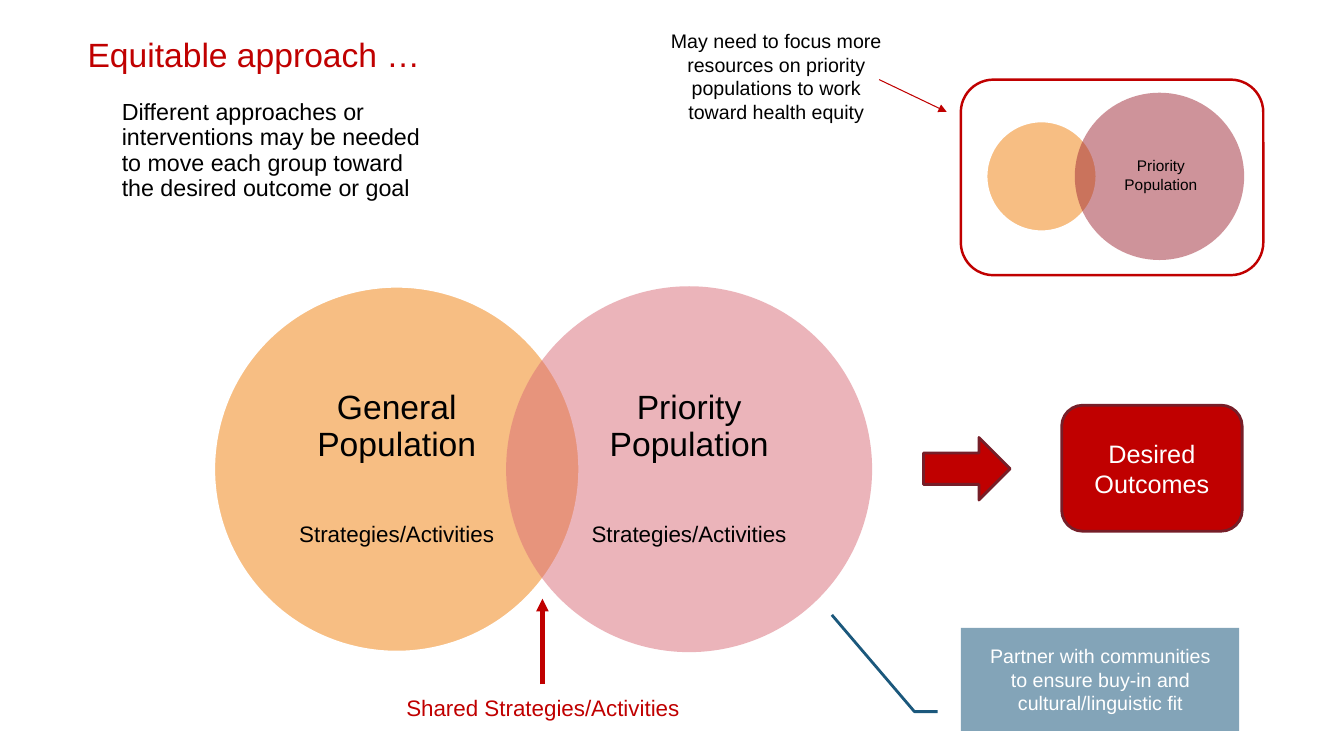
from dataclasses import dataclass

from lxml.etree import SubElement
from pptx import Presentation
from pptx.dml.color import RGBColor
from pptx.enum.shapes import MSO_CONNECTOR, MSO_SHAPE
from pptx.enum.text import MSO_ANCHOR, PP_ALIGN
from pptx.oxml.ns import qn
from pptx.util import Inches, Pt


@dataclass(frozen=True)
class Theme:
    font: str = "Arial"
    black: str = "000000"
    white: str = "FFFFFF"
    red: str = "C00000"
    dark_red: str = "761E28"
    orange: str = "F07F09"
    pink: str = "D96B77"
    wine: str = "9F2936"
    blue: str = "1B587C"
    heading: float = 24
    outcome: float = 18
    body: float = 16.6
    label: float = 16
    note: float = 14
    small: float = 11


THEME = Theme()


def color(value):
    return RGBColor.from_string(value)


def write(paragraph, text, size, text_color, align=PP_ALIGN.CENTER):
    paragraph.alignment = align
    run = paragraph.add_run()
    run.text = text
    run.font.name = THEME.font
    run.font.size = Pt(size)
    run.font.color.rgb = color(text_color)


def add_text(slide, box, text, size, text_color=THEME.black, align=PP_ALIGN.CENTER):
    """Add a wrapping text box and return its text frame."""
    frame = slide.shapes.add_textbox(*map(Inches, box)).text_frame
    frame.word_wrap = True
    write(frame.paragraphs[0], text, size, text_color, align)
    return frame


def add_shape(slide, kind, box, fill=None, opacity=100, line=None, line_width=2):
    shape = slide.shapes.add_shape(kind, *map(Inches, box))
    shape.shadow.inherit = False
    if fill:
        shape.fill.solid()
        shape.fill.fore_color.rgb = color(fill)
        if opacity < 100:
            fill_color = shape._element.spPr.find(qn("a:solidFill"))[0]
            SubElement(fill_color, qn("a:alpha"), val=str(opacity * 1000))
    else:
        shape.fill.background()
    if line:
        shape.line.color.rgb = color(line)
        shape.line.width = Pt(line_width)
    else:
        shape.line.fill.background()
    return shape


def add_circle(slide, box, fill, line=None):
    return add_shape(slide, MSO_SHAPE.OVAL, box, fill, 50, line)


def add_arrow(slide, start, end, width):
    arrow = slide.shapes.add_connector(
        MSO_CONNECTOR.STRAIGHT, *map(Inches, (*start, *end)))
    arrow.line.color.rgb = color(THEME.red)
    arrow.line.width = Pt(width)
    SubElement(arrow.line._get_or_add_ln(), qn("a:tailEnd"), type="triangle")
    SubElement(arrow._element.spPr, qn("a:effectLst"))


def add_population(slide, left, name, fill, line=None):
    """Add a large circle with the population name above its strategies."""
    top, diameter, inset = 2.84, 3.63, 0.53
    inner = diameter - 2 * inset
    add_circle(slide, (left, top, diameter, diameter), fill, line)
    frame = add_text(slide, (left + inset, top + inset, inner, inner),
                     name, THEME.heading)
    frame.vertical_anchor = MSO_ANCHOR.MIDDLE
    frame.margin_left = frame.margin_right = Inches(0.2)
    frame.margin_top = frame.margin_bottom = Inches(0.03)
    strategies = frame.add_paragraph()
    write(strategies, "Strategies/Activities", THEME.label, THEME.black)
    strategies.space_before = Pt(43)
    for paragraph in frame.paragraphs:
        paragraph.line_spacing = 0.9


def add_heading(slide):
    add_text(slide, (0.77, 0.29, 3.61, 0.5), "Equitable approach …",
             THEME.heading, THEME.red, PP_ALIGN.LEFT)
    body = add_text(slide, (1.11, 0.95, 3.27, 1.31),
                    "Different approaches or interventions may be needed to move "
                    "each group toward the desired outcome or goal",
                    THEME.body, align=PP_ALIGN.LEFT)
    body.paragraphs[0].line_spacing = 0.9


def add_venn(slide):
    add_population(slide, 2.12, "General Population", THEME.orange, THEME.white)
    add_population(slide, 5.02, "Priority Population", THEME.pink)
    add_arrow(slide, (5.38, 6.79), (5.38, 5.94), 3)
    add_text(slide, (3.63, 6.84, 3.51, 0.37), "Shared Strategies/Activities",
             THEME.label, THEME.red)


def add_outcome(slide):
    add_shape(slide, MSO_SHAPE.RIGHT_ARROW, (9.16, 4.34, 0.86, 0.62),
              THEME.red, line=THEME.dark_red)
    outcome = add_shape(slide, MSO_SHAPE.ROUNDED_RECTANGLE, (10.53, 4.02, 1.79, 1.25),
                        THEME.red, line=THEME.dark_red)
    outcome.text_frame.word_wrap = True
    outcome.text_frame.vertical_anchor = MSO_ANCHOR.MIDDLE
    write(outcome.text_frame.paragraphs[0], "Desired Outcomes",
          THEME.outcome, THEME.white)


def add_priority_inset(slide):
    add_circle(slide, (9.78, 1.2, 1.1, 1.1), THEME.orange, THEME.white)
    add_circle(slide, (10.66, 0.92, 1.68, 1.66), THEME.wine)
    add_text(slide, (6.52, 0.24, 2.36, 1.04),
             "May need to focus more resources on priority populations "
             "to work toward health equity", THEME.note)
    add_shape(slide, MSO_SHAPE.ROUNDED_RECTANGLE, (9.53, 0.79, 3, 1.94),
              line=THEME.red, line_width=1.75)
    add_arrow(slide, (8.72, 0.79), (9.39, 1.11), 0.75)
    add_text(slide, (11.03, 1.5, 0.97, 0.47), "Priority Population", THEME.small)


def add_partner_callout(slide):
    left, top, width, height = box = (9.53, 6.23, 2.76, 1.02)
    callout = add_shape(slide, MSO_SHAPE.LINE_CALLOUT_2_NO_BORDER, box,
                        THEME.blue, 54, THEME.blue)
    leader = ((9.3, 7.06), (9.07, 7.06), (8.25, 6.1))
    for index, (x, y) in enumerate(leader):
        callout.adjustments[2 * index] = (y - top) / height
        callout.adjustments[2 * index + 1] = (x - left) / width
    add_text(slide, (9.66, 6.34, 2.51, 0.81),
             "Partner with communities to ensure buy-in and cultural/linguistic fit",
             THEME.note, THEME.white)


def main():
    presentation = Presentation()
    presentation.slide_width = Inches(13.33)
    presentation.slide_height = Inches(7.5)
    slide = presentation.slides.add_slide(presentation.slide_layouts[6])
    add_heading(slide)
    add_venn(slide)
    add_outcome(slide)
    add_priority_inset(slide)
    add_partner_callout(slide)
    presentation.save("out.pptx")


if __name__ == "__main__":
    main()
